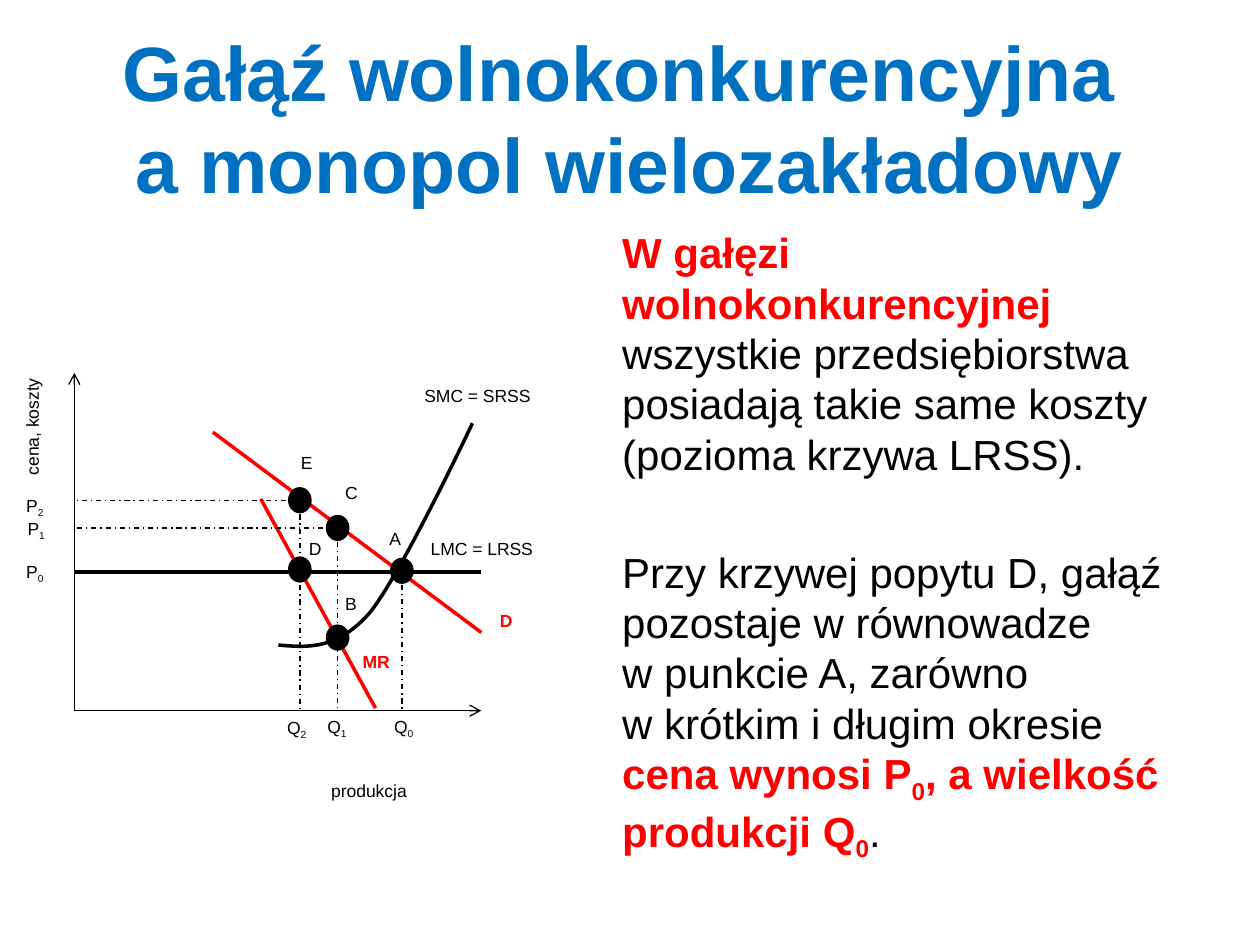
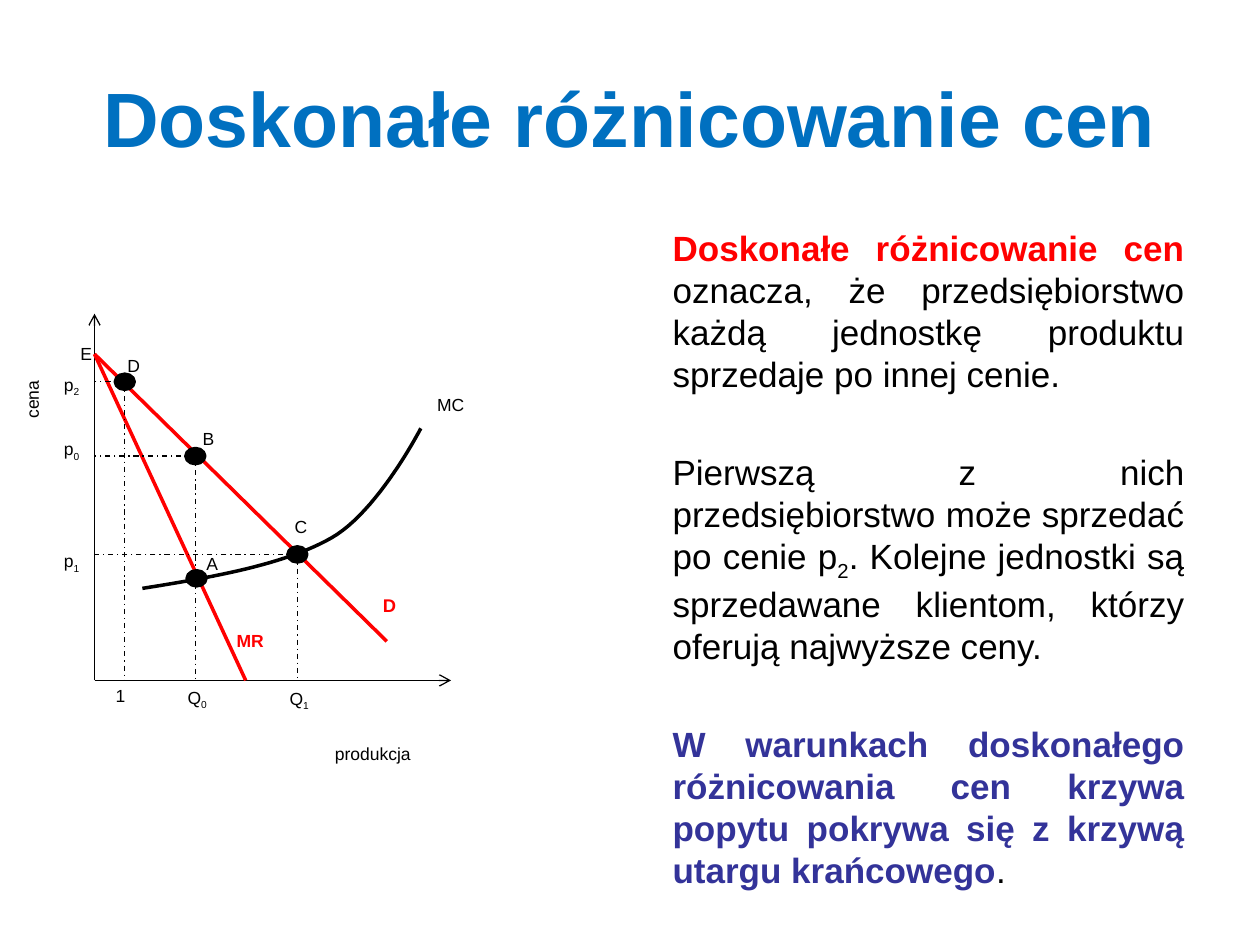
from dataclasses import dataclass
from lxml import etree
from pptx import Presentation
from pptx.dml.color import RGBColor
from pptx.enum import dml, shapes, text as tx
from pptx.oxml.ns import qn
from pptx.util import Inches, Pt


@dataclass(frozen=True)
class Theme:
    font: str = "Arial"
    blue: str = "0070C0"
    red: str = "FF0000"
    navy: str = "333399"
    black: str = "000000"
    title: float = 44
    label: float = 10
    thin: float = 0.75
    thick: float = 2


T = Theme()
WIDE, HIGH = 10, 7.5
TITLE = (0.5, 0.3, 9, 1.25)
ROW = 0.27  # height of a label

# Content: a run is (words, colour, bold); "_" lowers the next character.
# Points are dot centres; labels are (words, left, top, width).
SLIDES = [
    dict(
        title="Gałąź wolnokonkurencyjna \na monopol wielozakładowy",
        body=dict(
            box=(4.84, 1.75, 4.66, 5.62), size=24, gap=38.5, align="LEFT",
            paras=[
                [("W gałęzi wolnokonkurencyjnej ", T.red, True),
                 ("wszystkie przedsiębiorstwa posiadają takie same koszty "
                  "(pozioma krzywa LRSS).", T.black, False)],
                [("Przy krzywej popytu D, gałąź pozostaje w równowadze \n"
                  "w punkcie A, zarówno \nw krótkim i długim okresie ",
                  T.black, False),
                 ("cena wynosi P_0, a wielkość produkcji Q_0", T.red, True),
                 (".", T.black, False)],
            ]),
        zero=(0.59, 5.64), ends=(3.82, 2.96),
        lines=[((0.59, 4.54), (3.82, 4.54), T.black),
               ((1.69, 3.43), (3.82, 5.02), T.red),
               ((2.07, 3.96), (2.98, 5.62), T.red)],
        curve=[(2.21, 5.12), (2.44, 5.14), (2.67, 5.16), (2.93, 4.87),
               (3.18, 4.57), (3.75, 3.36), (3.75, 3.36)],
        dot=(0.16, 0.18),
        points=dict(A=(3.19, 4.53), B=(2.68, 5.06), C=(2.68, 4.19),
                    D=(2.38, 4.52), E=(2.38, 3.97)),
        drops="ACE", levels="CE",
        side=("cena, koszty", -0.57, 2.91, 1.65),
        labels=[("produkcja", 2.53, 6.14, 1.34),
                ("LMC = LRSS", 3.32, 4.22, 1.1),
                ("SMC = SRSS", 3.27, 3.01, 1.2),
                ("Q_0", 3.03, 5.63, 0.48), ("Q_1", 2.5, 5.63, 0.48),
                ("Q_2", 2.18, 5.64, 0.48), ("P_0", 0.11, 4.4, 0.48),
                ("P_1", 0.12, 4.06, 0.48), ("P_2", 0.11, 3.88, 0.48),
                ("A", 3.03, 4.14, 0.16), ("B", 2.64, 4.66, 0.2),
                ("C", 2.64, 3.78, 0.24), ("D", 2.36, 4.22, 0.19),
                ("E", 2.29, 3.54, 0.28)],
        names=[("D", 3.87, 4.79, 0.34, 10), ("MR", 2.78, 5.12, 0.53, 10)],
    ),
    dict(
        title="Doskonałe różnicowanie cen",
        body=dict(
            box=(5.24, 1.75, 4.26, 5.46), size=20, gap=32, align="JUSTIFY",
            paras=[
                [("Doskonałe różnicowanie cen ", T.red, True),
                 ("oznacza, że przedsiębiorstwo każdą jednostkę produktu "
                  "sprzedaje po innej cenie.", T.black, False)],
                [("Pierwszą z nich przedsiębiorstwo może sprzedać po cenie "
                  "p_2. Kolejne jednostki są sprzedawane klientom, którzy "
                  "oferują najwyższe ceny.", T.black, False)],
                [("W warunkach doskonałego różnicowania cen krzywa popytu "
                  "pokrywa się z krzywą utargu krańcowego", T.navy, True),
                 (".", T.black, False)],
            ]),
        zero=(0.75, 5.4), ends=(3.58, 2.49),
        lines=[((0.75, 2.81), (3.07, 5.09), T.red),
               ((0.75, 2.81), (1.95, 5.4), T.red)],
        curve=[(1.13, 4.67), (1.7, 4.58), (2.26, 4.48), (2.63, 4.27),
               (3, 4.06), (3.34, 3.4), (3.34, 3.4)],
        dot=(0.15, 0.12),
        points=dict(A=(1.56, 4.59), B=(1.55, 3.62), C=(2.36, 4.4),
                    D=(0.99, 3.03)),
        drops="BCD", levels="BCD",
        side=("cena", -0.06, 2.97, 0.63),
        labels=[("produkcja", 2.56, 5.85, 1.02), ("MC", 3.37, 3.08, 0.55),
                ("Q_0", 1.39, 5.4, 0.4), ("Q_1", 2.2, 5.41, 0.37),
                ("1", 0.82, 5.39, 0.5), ("p_0", 0.41, 3.43, 0.33),
                ("p_1", 0.41, 4.32, 0.33), ("p_2", 0.41, 2.92, 0.34),
                ("A", 1.54, 4.34, 0.3), ("B", 1.51, 3.35, 0.26),
                ("C", 2.24, 4.05, 0.23), ("D", 0.95, 2.77, 0.16),
                ("E", 0.54, 2.67, 0.2)],
        names=[("D", 2.94, 4.67, 0.3, 10.5), ("MR", 1.78, 4.95, 0.45, 10)],
    ),
]


def rgb(tone):
    return RGBColor.from_string(tone)


def add_run(para, words, size, tone, bold, low=False):
    run = para.add_run()
    run.text = words
    font = run.font
    font.name, font.size, font.bold = T.font, Pt(size), bold
    font.color.rgb = rgb(tone)
    if low:
        run._r.get_or_add_rPr().set("baseline", "-25000")


def fill_para(para, runs, size):
    for words, tone, bold in runs:
        for row, line in enumerate(words.split("\n")):
            if row:
                para.add_line_break()
            head, *rest = line.split("_")
            if head:
                add_run(para, head, size, tone, bold)
            for part in rest:
                add_run(para, part[0], size, tone, bold, low=True)
                if part[1:]:
                    add_run(para, part[1:], size, tone, bold)


def write(slide, words, box, size=T.label, tone=T.black, bold=False,
          align="LEFT", anchor="TOP", gap=0, turn=0):
    """Words are one string or a list of paragraphs made of runs."""
    shape = slide.shapes.add_textbox(*map(Inches, box))
    shape.rotation = turn
    frame = shape.text_frame
    frame.word_wrap = True
    frame.vertical_anchor = getattr(tx.MSO_ANCHOR, anchor)
    paras = [[(words, tone, bold)]] if isinstance(words, str) else words
    for row, runs in enumerate(paras):
        para = frame.add_paragraph() if row else frame.paragraphs[0]
        para.alignment = getattr(tx.PP_ALIGN, align)
        if row:
            para.space_before = Pt(gap)
        fill_para(para, runs, size)


def draw(slide, start, end, tone=T.black, width=T.thin, dash=False,
         arrow=False):
    line = slide.shapes.add_connector(
        shapes.MSO_CONNECTOR.STRAIGHT, *map(Inches, (*start, *end)))
    line.line.color.rgb = rgb(tone)
    line.line.width = Pt(width)
    if dash:
        line.line.dash_style = dml.MSO_LINE.DASH_DOT
    if arrow:
        etree.SubElement(line.line._get_or_add_ln(), qn("a:tailEnd"),
                         type="arrow")
    etree.SubElement(line._element.spPr, qn("a:effectLst"))


def bend(knots, steps=24):
    """Points along a chain of cubic curves."""
    trail = [knots[0]]
    for at in range(0, len(knots) - 1, 3):
        part = knots[at:at + 4]
        for step in range(1, steps + 1):
            t = step / steps
            mix = ((1 - t) ** 3, 3 * t * (1 - t) ** 2,
                   3 * t * t * (1 - t), t ** 3)
            trail.append(tuple(sum(m * knot[axis] for m, knot in zip(mix, part))
                               for axis in (0, 1)))
    return trail


def add_curve(slide, knots):
    first, *rest = [(Inches(x), Inches(y)) for x, y in bend(knots)]
    pen = slide.shapes.build_freeform(*first)
    pen.add_line_segments(rest, close=False)
    curve = pen.convert_to_shape()
    curve.shadow.inherit = False
    curve.fill.background()
    curve.line.color.rgb = rgb(T.black)
    curve.line.width = Pt(T.thick)


def add_dot(slide, mid, size):
    (x, y), (w, h) = mid, size
    dot = slide.shapes.add_shape(
        shapes.MSO_SHAPE.OVAL, *map(Inches, (x - w / 2, y - h / 2, w, h)))
    dot.shadow.inherit = False
    dot.fill.solid()
    dot.fill.fore_color.rgb = dot.line.color.rgb = rgb(T.black)
    dot.line.width = Pt(T.thick)


def add_graph(slide, data):
    left, base = data["zero"]
    right, top = data["ends"]
    # Axes
    for end in ((left, top), (right, base)):
        draw(slide, data["zero"], end, arrow=True)
    # Curves
    for start, end, tone in data["lines"]:
        draw(slide, start, end, tone, T.thick)
    add_curve(slide, data["curve"])
    # Guides from the points to the axes
    points = data["points"]
    for key in data["drops"]:
        x, y = points[key]
        draw(slide, (x, y), (x, base), dash=True)
    for key in data["levels"]:
        x, y = points[key]
        draw(slide, (x, y), (left, y), dash=True)
    for mid in points.values():
        add_dot(slide, mid, data["dot"])
    # Labels
    for words, *box in data["labels"]:
        write(slide, words, (*box, ROW))
    for words, *box, size in data["names"]:
        write(slide, words, (*box, ROW), size=size, tone=T.red, bold=True)
    words, *box = data["side"]
    write(slide, words, (*box, ROW), turn=270)


def main():
    deck = Presentation()
    deck.slide_width, deck.slide_height = Inches(WIDE), Inches(HIGH)
    for data in SLIDES:
        slide = deck.slides.add_slide(deck.slide_layouts[6])
        write(slide, data["title"], TITLE, size=T.title, tone=T.blue,
              bold=True, align="CENTER", anchor="MIDDLE")
        body = data["body"]
        write(slide, body["paras"], body["box"], size=body["size"],
              align=body["align"], gap=body["gap"])
        add_graph(slide, data)
    deck.save("out.pptx")


if __name__ == "__main__":
    main()
